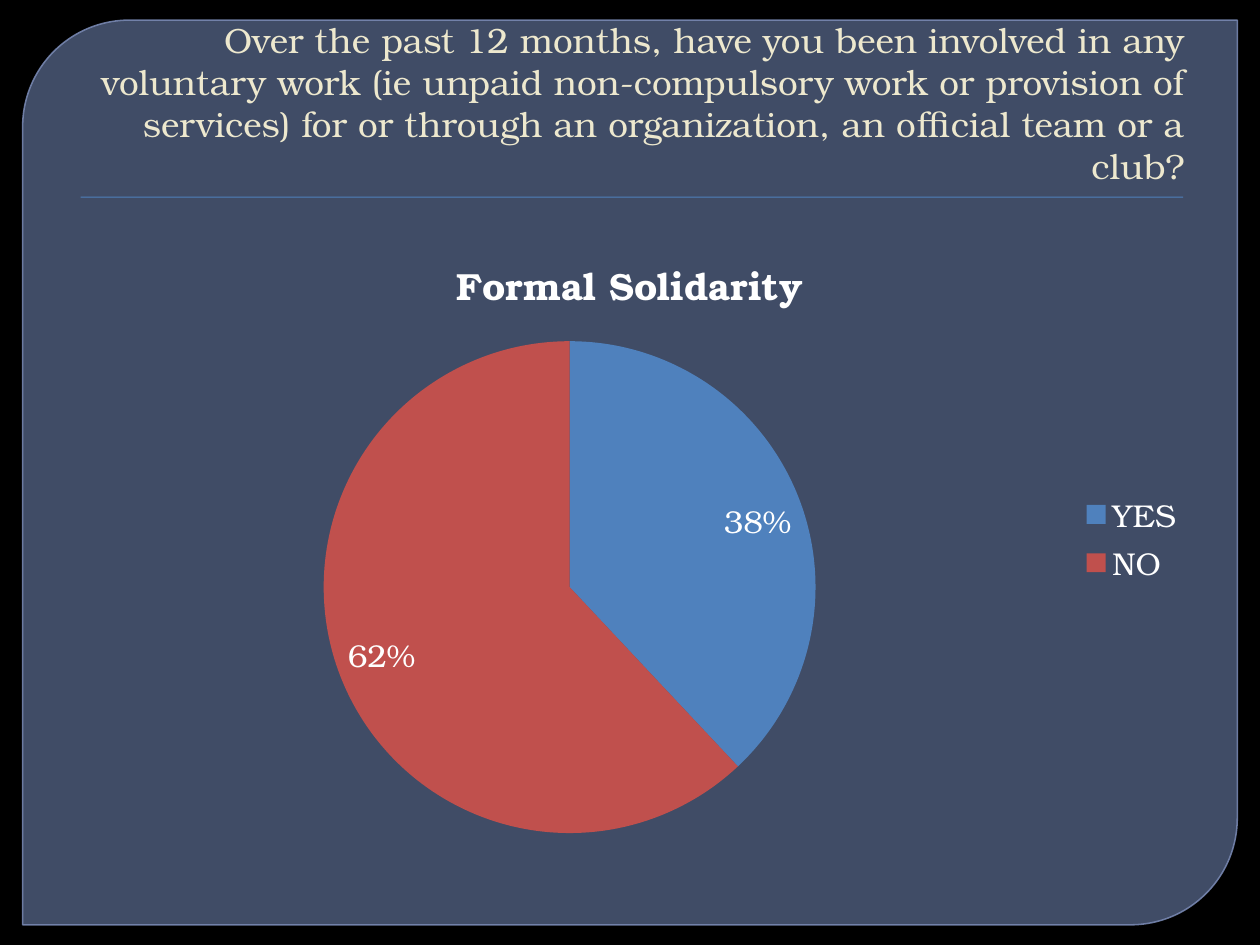
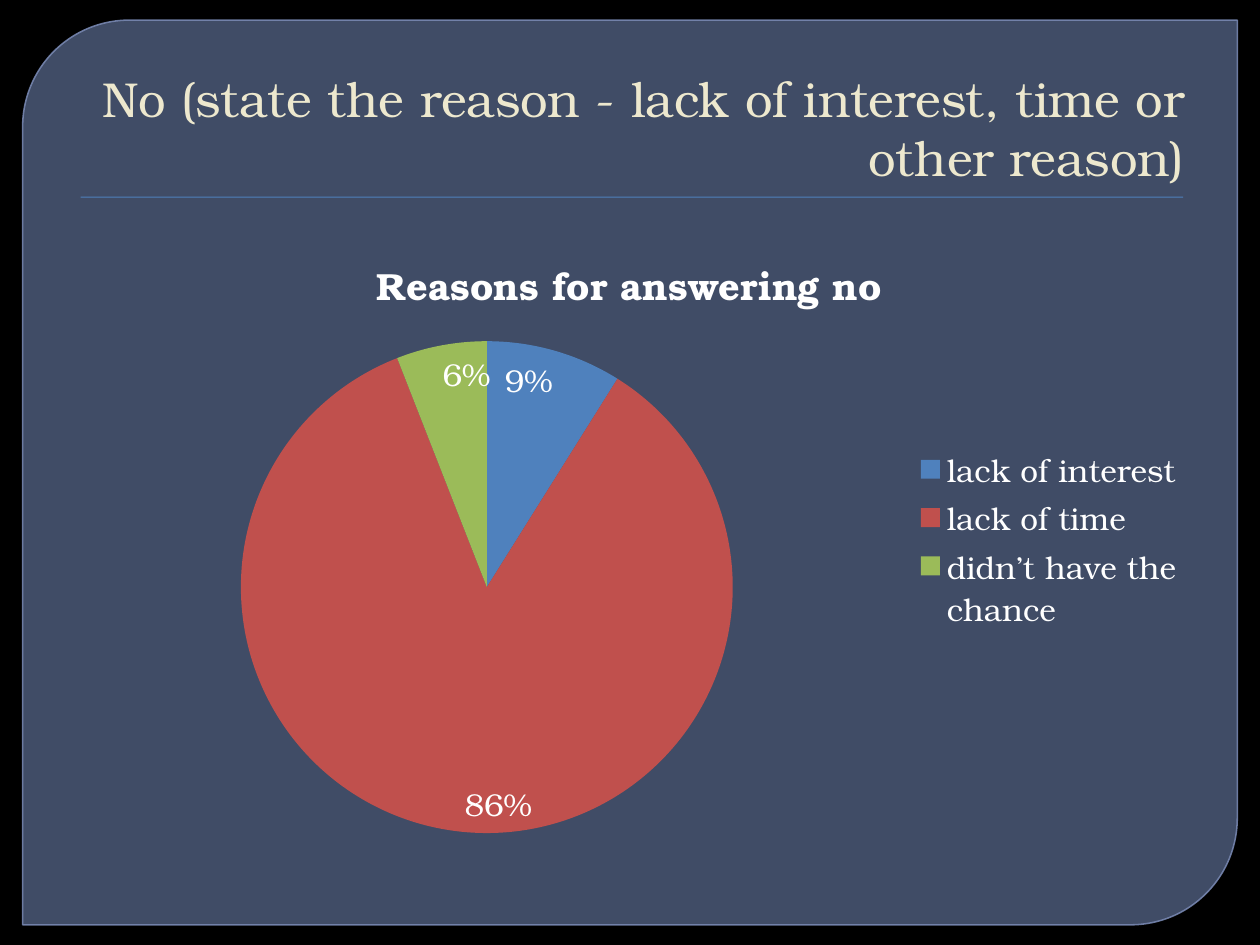
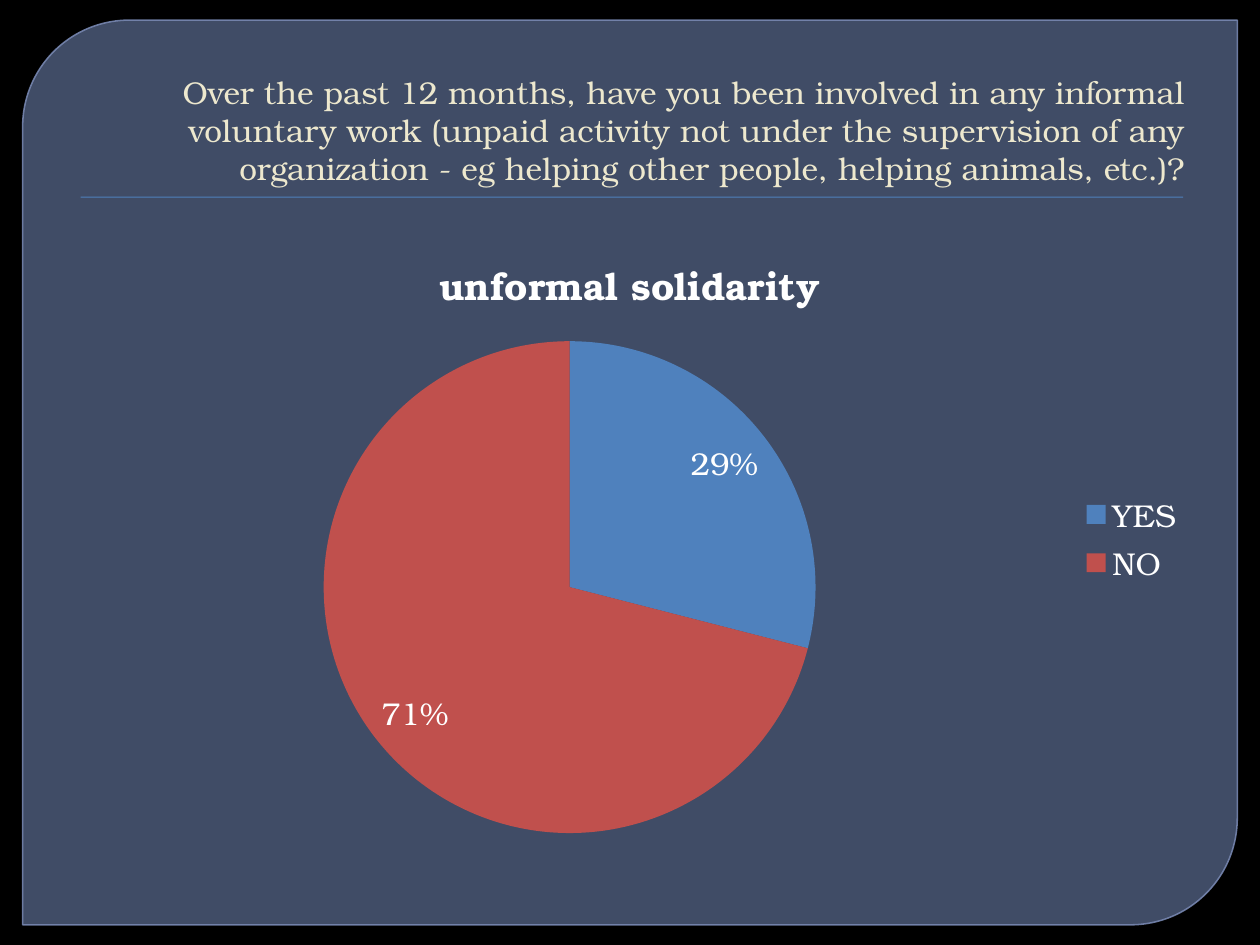
from lxml import etree
from pptx import Presentation
from pptx.chart.data import CategoryChartData
from pptx.dml.color import RGBColor
from pptx.enum import chart as charts, shapes, text
from pptx.oxml.ns import qn
from pptx.util import Inches, Pt

FONT = "TeX Gyre Bonum"
COLORS = {
    "background": "000000",
    "panel": "63759D",
    "panel_edge": "7989B3",
    "rule": "4F81BD",
    "title": "EDE8CE",
    "chart_text": "FFFFFF",
}
SLICE_COLORS = ["4F81BD", "C0504D", "9BBB59"]

SURVEY = [
    {
        "question": "Over the past 12 months, have you been involved in any voluntary work "
        "(ie unpaid non-compulsory work or provision of services) for or through "
        "an organization, an official team or a club?",
        "size": 20,
        "heading": "Formal Solidarity",
        "answers": {"YES": 38, "NO": 62},
    },
    {
        "question": "No (state the reason - lack of interest, time or other reason)",
        "size": 28,
        "heading": "Reasons for answering no",
        "answers": {"lack of interest": 9, "lack of time": 86, "didn’t have the chance": 6},
    },
    {
        "question": "Over the past 12 months, have you been involved in any informal "
        "voluntary work (unpaid activity not under the supervision of any "
        "organization - eg helping other people, helping animals, etc.)?",
        "size": 18,
        "heading": "unformal solidarity",
        "answers": {"YES": 29, "NO": 71},
    },
]


def set_all(target, values):
    for name, value in values.items():
        setattr(target, name, value)


def rgb(name):
    return RGBColor.from_string(COLORS[name])


def style_font(font, size, color, bold=False):
    set_all(font, {"name": FONT, "size": Pt(size), "bold": bold})
    font.color.rgb = rgb(color)


def paint(fill, color, opacity=100):
    fill.solid()
    fill.fore_color.rgb = rgb(color)
    if opacity < 100:
        element = fill._xPr.find(qn("a:solidFill"))[0]
        etree.SubElement(element, qn("a:alpha"), val=str(opacity * 1000))


def add_block(page, preset, area, color, opacity=100):
    block = page.shapes.add_shape(preset, *map(Inches, area))
    block.shadow.inherit = False
    paint(block.fill, color, opacity)
    block.line.fill.background()
    return block


def add_frame(page):
    paint(page.background.fill, "background")
    panel = add_block(page, shapes.MSO_SHAPE.ROUND_2_DIAG_RECTANGLE,
                      (0.18, 0.16, 9.64, 7.18), "panel", 65)
    panel.adjustments[0] = 0.118
    panel.adjustments[1] = 0
    paint(panel.line.fill, "panel_edge", 88)
    panel.line.width = Pt(0.87)
    add_block(page, shapes.MSO_SHAPE.RECTANGLE, (0.64, 1.56, 8.75, 0.01), "rule")


def add_question(page, question, size):
    box = page.shapes.add_textbox(*map(Inches, (0.5, 0.28, 9, 1.25)))
    frame = box.text_frame
    set_all(frame, {"word_wrap": True, "vertical_anchor": text.MSO_ANCHOR.BOTTOM})
    para = frame.paragraphs[0]
    para.alignment = text.PP_ALIGN.RIGHT
    para._p.get_or_add_pPr().set("marL", str(Inches(0.06)))
    span = para.add_run()
    span.text = question
    style_font(span.font, size, "title")


def add_pie(page, heading, answers):
    data = CategoryChartData()
    data.categories = list(answers)
    data.add_series(heading, list(answers.values()))
    chart = page.shapes.add_chart(charts.XL_CHART_TYPE.PIE,
                                  *map(Inches, (0.5, 1.8, 9, 4.95)), data).chart
    style_font(chart.font, 18, "chart_text")

    chart.has_title = True
    chart.chart_title.include_in_layout = False
    span = chart.chart_title.text_frame.paragraphs[0].add_run()
    span.text = heading
    style_font(span.font, 21.6, "chart_text", bold=True)

    chart.has_legend = True
    set_all(chart.legend, {"position": charts.XL_LEGEND_POSITION.RIGHT,
                           "include_in_layout": False})

    plot = chart.plots[0]
    set_all(plot, {"vary_by_categories": True, "has_data_labels": True})
    set_all(plot.data_labels, {
        "show_value": True,
        "show_percentage": False,
        "number_format": '0"%"',
        "number_format_is_linked": False,
        "position": charts.XL_LABEL_POSITION.INSIDE_END,
    })
    style_font(plot.data_labels.font, 18, "chart_text")
    for index, color in enumerate(SLICE_COLORS[:len(answers)]):
        piece = plot.series[0].points[index].format
        piece.fill.solid()
        piece.fill.fore_color.rgb = RGBColor.from_string(color)
        piece.line.fill.background()


def main():
    deck = Presentation()
    set_all(deck, {"slide_width": Inches(10), "slide_height": Inches(7.5)})
    for item in SURVEY:
        page = deck.slides.add_slide(deck.slide_layouts[6])
        add_frame(page)
        add_question(page, item["question"], item["size"])
        add_pie(page, item["heading"], item["answers"])
    deck.save("out.pptx")


if __name__ == "__main__":
    main()
